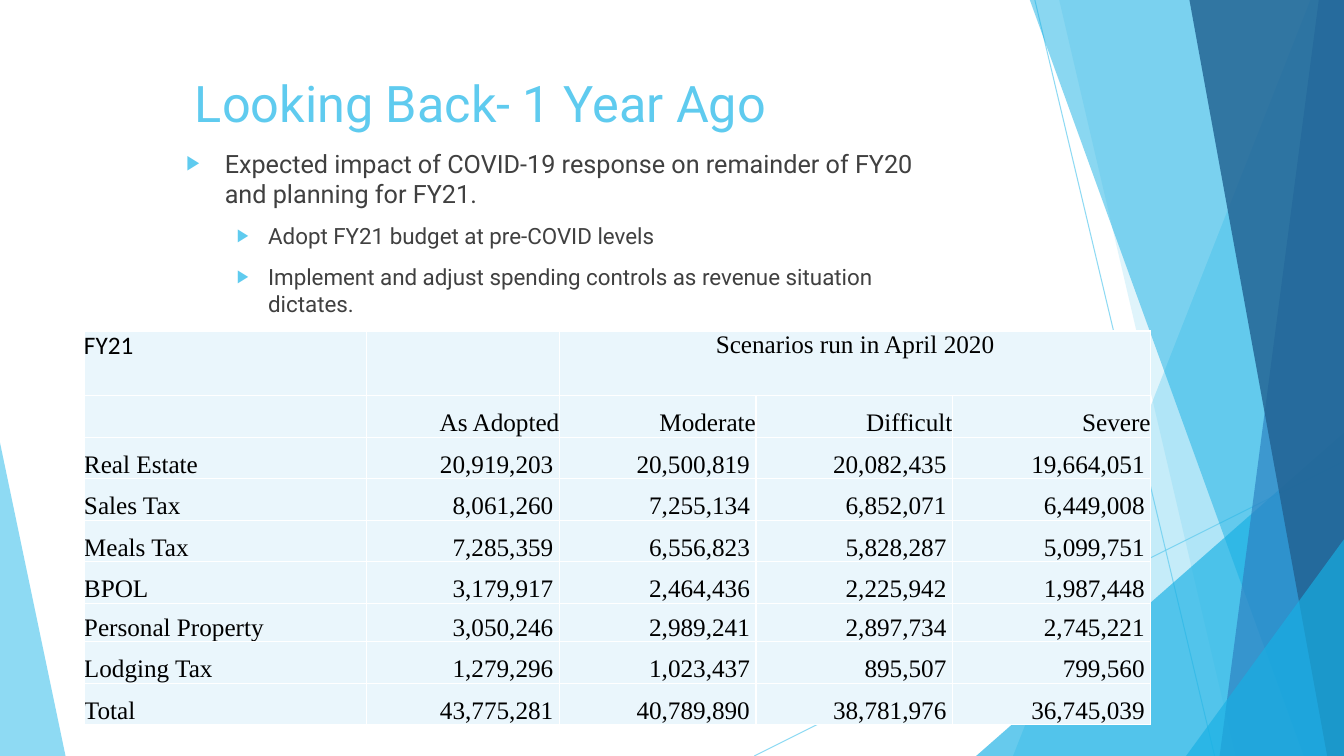
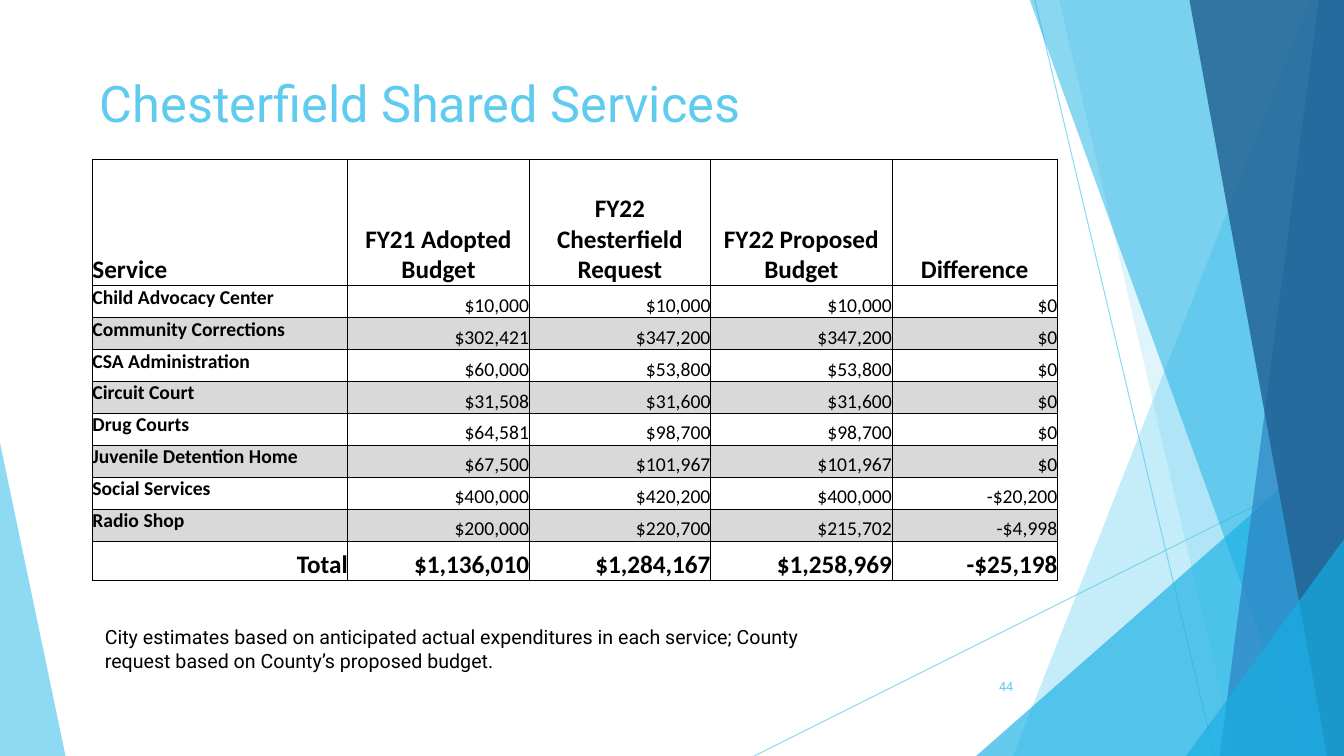
from dataclasses import dataclass, replace

from lxml import etree
from pptx import Presentation
from pptx import util as u
from pptx.dml.color import RGBColor
from pptx.enum import shapes, text
from pptx.oxml import ns

LEFT, CENTER, RIGHT = text.PP_ALIGN.LEFT, text.PP_ALIGN.CENTER, text.PP_ALIGN.RIGHT
TOP, MIDDLE, BOTTOM = text.MSO_ANCHOR.TOP, text.MSO_ANCHOR.MIDDLE, text.MSO_ANCHOR.BOTTOM
WIDTH, HEIGHT = u.Inches(13.33), u.Inches(7.5)
COLUMNS, ROWS = 160, 90


@dataclass(frozen=True)
class Theme:
    sky: str = "5FCBEF"
    cyan: str = "17B0E4"
    blue: str = "2E83C3"
    navy: str = "226292"
    ink: str = "404040"
    black: str = "000000"
    white: str = "FFFFFF"
    pale: str = "EAF6FC"
    gray: str = "D9D9D9"
    main: str = "Roboto"
    plain: str = "Calibri"
    serif: str = "Times New Roman"
    title: int = 36
    large: int = 18
    medium: int = 16
    small: int = 14
    tiny: int = 9


THEME = Theme()


@dataclass(frozen=True)
class Look:
    font: str = THEME.plain
    size: int = THEME.large
    color: str = THEME.black
    bold: bool = False
    align: int = LEFT
    anchor: int = BOTTOM
    fill: str = ""
    inset: float = 0


PANELS = [
    (THEME.sky, 70, 0, (0, 52.7), (7.8, 90)),
    (THEME.sky, 36, COLUMNS, (156, 0), (120.6, 90)),
    (THEME.sky, 20, COLUMNS, (126.1, 0), (147.1, 90)),
    (THEME.cyan, 66, COLUMNS, (160, 51.5), (116.2, 90)),
    (THEME.cyan, 50, COLUMNS, (122.6, 0), (155.2, 90)),
    (THEME.blue, 70, COLUMNS, (157, 0), (145.2, 90)),
    (THEME.navy, 82, COLUMNS, (141.6, 0), (158, 90)),
    (THEME.cyan, 66, COLUMNS, (160, 64.2), (141.2, 90)),
]
RAYS = [((89.8, 90), (160, 54.9)), ((123.2, 0), (144.6, 90))]

BULLETS = [
    (0, "Expected impact of COVID-19 response on remainder of FY20 and planning for FY21."),
    (1, "Adopt FY21 budget at pre-COVID levels"),
    (1, "Implement and adjust spending controls as revenue situation dictates."),
]
SCENARIOS = [
    ["FY21", "", "Scenarios run in April 2020", "", ""],
    ["", "As Adopted", "Moderate", "Difficult", "Severe"],
    ["Real Estate", "20,919,203", "20,500,819", "20,082,435", "19,664,051"],
    ["Sales Tax", "8,061,260", "7,255,134", "6,852,071", "6,449,008"],
    ["Meals Tax", "7,285,359", "6,556,823", "5,828,287", "5,099,751"],
    ["BPOL", "3,179,917", "2,464,436", "2,225,942", "1,987,448"],
    ["Personal Property", "3,050,246", "2,989,241", "2,897,734", "2,745,221"],
    ["Lodging Tax", "1,279,296", "1,023,437", "895,507", "799,560"],
    ["Total", "43,775,281", "40,789,890", "38,781,976", "36,745,039"],
]
SERVICES = [
    ["Service", "FY21 Adopted Budget", "FY22 Chesterfield Request",
     "FY22 Proposed Budget", "Difference"],
    ["Child Advocacy Center", "$10,000", "$10,000", "$10,000", "$0"],
    ["Community Corrections", "$302,421", "$347,200", "$347,200", "$0"],
    ["CSA Administration", "$60,000", "$53,800", "$53,800", "$0"],
    ["Circuit Court", "$31,508", "$31,600", "$31,600", "$0"],
    ["Drug Courts", "$64,581", "$98,700", "$98,700", "$0"],
    ["Juvenile Detention Home", "$67,500", "$101,967", "$101,967", "$0"],
    ["Social Services", "$400,000", "$420,200", "$400,000", "-$20,200"],
    ["Radio Shop", "$200,000", "$220,700", "$215,702", "-$4,998"],
    ["Total", "$1,136,010", "$1,284,167", "$1,258,969", "-$25,198"],
]


def across(columns):
    return u.Emu(round(WIDTH * columns / COLUMNS))


def down(rows):
    return u.Emu(round(HEIGHT * rows / ROWS))


def spot(point):
    return across(point[0]), down(point[1])


def area(left, top, width, height):
    return across(left), down(top), across(width), down(height)


def place(shape, box):
    shape.left, shape.top, shape.width, shape.height = area(*box)


def rgb(color):
    return RGBColor.from_string(color)


def child(parent, tag, **attributes):
    return etree.SubElement(parent, ns.qn(tag), attributes)


def fade(shape, percent):
    for color in shape.element.iter(ns.qn("a:srgbClr")):
        child(color, "a:alpha", val=str(percent * 1000))


def add_panel(slide, color, opacity, side, start, end):
    builder = slide.shapes.build_freeform(*spot(start), scale=1.0)
    builder.add_line_segments([spot(end), spot((side, ROWS)), spot((side, start[1]))])
    panel = builder.convert_to_shape()
    panel.shadow.inherit = False
    panel.fill.solid()
    panel.fill.fore_color.rgb = rgb(color)
    panel.line.fill.background()
    fade(panel, opacity)
    return panel


def add_ray(slide, start, end):
    ray = slide.shapes.add_connector(shapes.MSO_CONNECTOR.STRAIGHT, *spot(start), *spot(end))
    ray.line.color.rgb = rgb(THEME.sky)
    ray.line.width = u.Pt(0.75)
    fade(ray, 70)
    child(ray.element.spPr, "a:effectLst")
    return ray


def decorate_master(deck, slide):
    parts = [add_panel(slide, *PANELS[0])]
    parts += [add_ray(slide, *ray) for ray in RAYS]
    parts += [add_panel(slide, *panel) for panel in PANELS[1:]]
    tree = deck.slide_master.shapes.element
    for index, part in enumerate(parts):
        part.element.xpath(".//p:cNvPr")[0].set("id", str(100 + index))
        tree.insert(2 + index, part.element)


def add_span(para, words, look):
    para.alignment = look.align
    span = para.add_run()
    span.text = words
    span.font.name = look.font
    span.font.size = u.Pt(look.size)
    span.font.bold = look.bold
    span.font.color.rgb = rgb(look.color)


def set_frame(frame, anchor):
    frame.word_wrap = True
    frame.auto_size = text.MSO_AUTO_SIZE.NONE
    frame.vertical_anchor = anchor


def write_title(slide, words, box):
    title = slide.shapes.title
    place(title, box)
    set_frame(title.text_frame, TOP)
    add_span(title.text_frame.paragraphs[0], words, Look(THEME.main, THEME.title, THEME.sky))


def add_bullet(para, margin, hang):
    properties = para._p.get_or_add_pPr()
    properties.set("marL", str(u.Inches(margin)))
    properties.set("indent", str(-u.Inches(hang)))
    child(child(properties, "a:buClr"), "a:srgbClr", val=THEME.sky)
    child(properties, "a:buSzPct", val="80000")
    child(properties, "a:buFont", typeface="Arial")
    child(properties, "a:buChar", char="▶")


def write_bullets(slide, items, box):
    body = slide.placeholders[1]
    place(body, box)
    frame = body.text_frame
    set_frame(frame, TOP)
    levels = [(0.38, 0.38, THEME.large), (0.81, 0.31, THEME.medium)]
    for index, (level, words) in enumerate(items):
        para = frame.add_paragraph() if index else frame.paragraphs[0]
        margin, hang, size = levels[level]
        para.level = level
        add_bullet(para, margin, hang)
        para.space_before = u.Pt(10 if index else 0)
        add_span(para, words, Look(THEME.main, size, THEME.ink))


def add_label(slide, words, box, look):
    label = slide.shapes.add_textbox(*area(*box))
    set_frame(label.text_frame, look.anchor)
    add_span(label.text_frame.paragraphs[0], words, look)


def set_borders(cell, color, points):
    properties = cell._tc.get_or_add_tcPr()
    for side in ("a:lnL", "a:lnR", "a:lnT", "a:lnB"):
        edge = child(properties, side, w=str(u.Pt(points)))
        child(child(edge, "a:solidFill"), "a:srgbClr", val=color)


def fill_cell(cell, words, look, border):
    cell.margin_left = cell.margin_top = cell.margin_bottom = 0
    cell.margin_right = u.Inches(look.inset)
    cell.vertical_anchor = look.anchor
    set_borders(cell, *border)
    if look.fill:
        cell.fill.solid()
        cell.fill.fore_color.rgb = rgb(look.fill)
    else:
        cell.fill.background()
    if words:
        add_span(cell.text_frame.paragraphs[0], words, look)


def add_grid(slide, data, corner, widths, heights, look_at, border):
    box = area(*corner, sum(widths), sum(heights))
    table = slide.shapes.add_table(len(heights), len(widths), *box).table
    table.first_row = table.horz_banding = False
    for column, width in zip(table.columns, widths):
        column.width = across(width)
    for row, height in zip(table.rows, heights):
        row.height = down(height)
    for y, line in enumerate(data):
        for x, words in enumerate(line):
            fill_cell(table.cell(y, x), words, look_at(y, x), border)
    return table


def scenario_look(y, x):
    base = Look(font=THEME.serif, fill=THEME.pale)
    if y == 0:
        return replace(base, anchor=TOP, font=THEME.serif if x else THEME.plain,
                       align=CENTER if x else LEFT)
    if x == 0:
        return base
    return replace(base, align=RIGHT, inset=0.06 if y > 1 else 0)


def service_look(y, x):
    if y == 0:
        return Look(bold=True, align=CENTER if x else LEFT)
    if y == len(SERVICES) - 1:
        return Look(bold=True, align=RIGHT)
    base = Look(size=THEME.small, fill="" if y % 2 else THEME.gray)
    if x == 0:
        return replace(base, bold=True, anchor=TOP)
    return replace(base, align=RIGHT)


def build_scenarios(slide):
    write_title(slide, "Looking Back- 1 Year Ago", (22, 8, 89.3, 9))
    write_bullets(slide, BULLETS, (21, 17, 92.3, 22))
    table = add_grid(slide, SCENARIOS, (10, 39.4), [33.6, 23, 23.4, 23.4, 23.6],
                     [7.7] + [4.95] * 5 + [4.55] + [4.95] * 2,
                     scenario_look, (THEME.white, 1))
    table.cell(0, 2).merge(table.cell(0, 4))


def build_services(slide):
    write_title(slide, "Chesterfield Shared Services", (10.7, 8, 111, 17.3))
    add_label(slide, "44", (112.8, 79.3, 9, 4.8),
              Look(THEME.main, THEME.tiny, THEME.sky, align=RIGHT, anchor=MIDDLE))
    add_label(slide, "City estimates based on anticipated actual expenditures in each service; "
              "County request based on County’s proposed budget.", (11.3, 73.8, 90.6, 6.8),
              Look(THEME.main, THEME.small, anchor=TOP))
    add_grid(slide, SERVICES, (11, 19), [30.4] + [21.6] * 3 + [19.7],
             [15] + [3.8] * 8 + [4.7], service_look, (THEME.black, 0.5))


def main():
    deck = Presentation()
    deck.slide_width, deck.slide_height = WIDTH, HEIGHT
    first = deck.slides.add_slide(deck.slide_layouts[1])
    decorate_master(deck, first)
    build_scenarios(first)
    build_services(deck.slides.add_slide(deck.slide_layouts[5]))
    deck.save("out.pptx")


if __name__ == "__main__":
    main()
